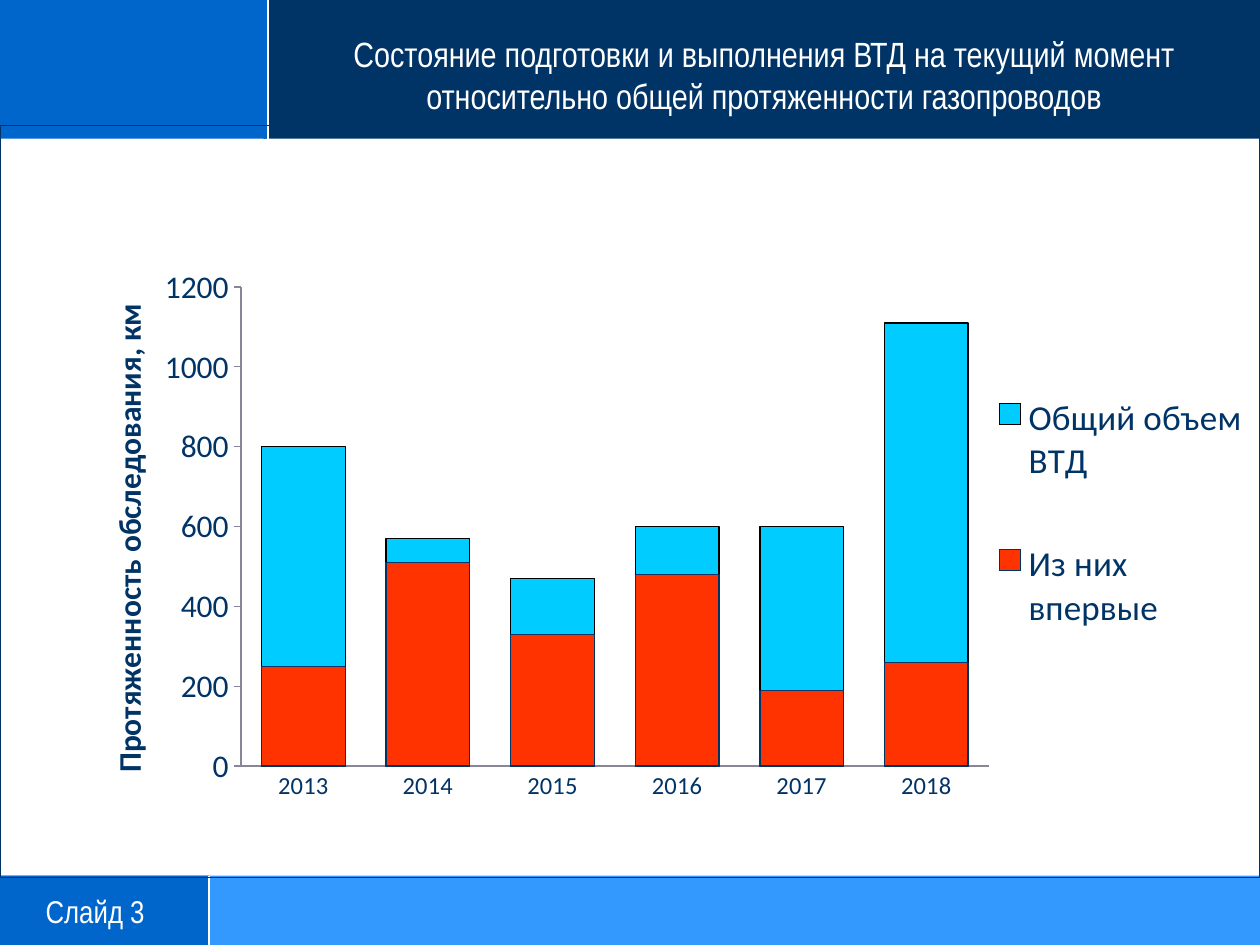
from lxml import etree
from pptx import Presentation
from pptx.chart.data import CategoryChartData
from pptx.dml.color import RGBColor
from pptx.enum.chart import XL_CHART_TYPE, XL_LEGEND_POSITION, XL_TICK_MARK
from pptx.enum.shapes import MSO_CONNECTOR, MSO_SHAPE
from pptx.enum.text import MSO_ANCHOR, MSO_AUTO_SIZE, PP_ALIGN
from pptx.oxml.ns import qn
from pptx.util import Pt

RECT = MSO_SHAPE.RECTANGLE
STRAIGHT = MSO_CONNECTOR.STRAIGHT
CLUSTERED = XL_CHART_TYPE.COLUMN_CLUSTERED
RIGHT = XL_LEGEND_POSITION.RIGHT
TICK_NONE, TICK_OUT = XL_TICK_MARK.NONE, XL_TICK_MARK.OUTSIDE
GROW = MSO_AUTO_SIZE.SHAPE_TO_FIT_TEXT
TOP = MSO_ANCHOR.TOP
CENTER = PP_ALIGN.CENTER

THEME = {
    "navy": RGBColor(0x00, 0x33, 0x66),
    "blue": RGBColor(0x00, 0x66, 0xCC),
    "sky": RGBColor(0x33, 0x99, 0xFF),
    "white": RGBColor(0xFF, 0xFF, 0xFF),
    "black": RGBColor(0x00, 0x00, 0x00),
    "cyan": RGBColor(0x00, 0xCC, 0xFF),
    "red": RGBColor(0xFF, 0x33, 0x00),
    "axis": RGBColor(0x87, 0x87, 0x97),
    "heading_font": "Arial Narrow",
    "chart_font": "Calibri",
    "title": Pt(20),
    "footer": Pt(18),
    "chart": Pt(18),
    "category": Pt(14),
    "legend": Pt(20),
}


def write_text(sp, text, size, wrap):
    tf = sp.text_frame
    for key, value in {"word_wrap": wrap, "auto_size": GROW, "vertical_anchor": TOP}.items():
        setattr(tf, key, value)
    p = tf.paragraphs[0]
    p.alignment = CENTER
    r = p.add_run()
    r.text = text
    for key, value in {"size": size, "name": THEME["heading_font"], "bold": False}.items():
        setattr(r.font, key, value)
    r.font.color.rgb = THEME["white"]


def place(parent, **values):
    for old in parent.findall(qn("c:layout")):
        parent.remove(old)
    layout = etree.Element(qn("c:layout"))
    manual = etree.SubElement(layout, qn("c:manualLayout"))
    for key, value in values.items():
        etree.SubElement(manual, qn("c:" + key)).set("val", str(value))
    overlay = parent.find(qn("c:overlay"))
    parent.insert(0 if overlay is None else parent.index(overlay), layout)


prs = Presentation()
prs.slide_width, prs.slide_height = Pt(720), Pt(540)
s = prs.slides.add_slide(prs.slide_layouts[5])

HEADER_H, FOOTER_Y, FOOTER_H = 79.2, 500.4, 39.6
LOGO_W, NUMBER_W = 153.36, 119.52

bands = [
    (150.48, 0, 569.52, HEADER_H, "navy"),
    (0, 0, LOGO_W, HEADER_H, "blue"),
    (0, FOOTER_Y, 720, FOOTER_H, "sky"),
    (0, FOOTER_Y, NUMBER_W, FOOTER_H, "blue"),
]
for x, y, w, h, color in bands:
    sp = s.shapes.add_shape(RECT, Pt(x), Pt(y), Pt(w), Pt(h))
    sp.shadow.inherit = False
    sp.fill.solid()
    sp.fill.fore_color.rgb = THEME[color]
    sp.line.fill.background()

for x, bottom, top, width in [(LOGO_W, HEADER_H, 0, 1.25), (NUMBER_W, 540, FOOTER_Y, 1)]:
    line = s.shapes.add_connector(STRAIGHT, Pt(x), Pt(bottom), Pt(x), Pt(top))
    line.line.color.rgb = THEME["white"]
    line.line.width = Pt(width)
    etree.SubElement(line.element.spPr, qn("a:effectLst"))

number = s.shapes.add_textbox(Pt(13.68), Pt(506.16), Pt(81.36), Pt(28.8))
write_text(number, "Слайд 3", THEME["footer"], False)

title = s.shapes.title
box = {"left": Pt(LOGO_W), "top": Pt(15.12), "width": Pt(566.64), "height": Pt(55.44)}
for key, value in box.items():
    setattr(title, key, value)
write_text(title, "Состояние подготовки и выполнения ВТД на текущий момент "
           "относительно общей протяженности газопроводов", THEME["title"], True)
title.element.getparent().append(title.element)

data = CategoryChartData()
data.categories = ["2013", "2014", "2015", "2016", "2017", "2018"]
data.add_series("Общий объем ВТД", [800, 570, 470, 600, 600, 1110])
data.add_series("Из них впервые", [250, 510, 330, 480, 190, 260])
frame = s.shapes.add_chart(CLUSTERED, Pt(0), Pt(71.28), Pt(720), Pt(430.56), data)
chart = frame.chart
chart.has_title = False
chart.font.size = THEME["chart"]
chart.font.name = THEME["chart_font"]
chart.font.color.rgb = THEME["navy"]

plot = chart.plots[0]
for key, value in {"gap_width": 49, "overlap": 100, "vary_by_categories": False}.items():
    setattr(plot, key, value)
for series, fill, outline in zip(plot.series, ("cyan", "red"), ("black", "navy")):
    series.format.fill.solid()
    series.format.fill.fore_color.rgb = THEME[fill]
    series.format.line.color.rgb = THEME[outline]
    series.format.line.width = Pt(0.75)

axis_formats = [
    (chart.category_axis, {"major_tick_mark": TICK_NONE}, "category"),
    (chart.value_axis, {"major_tick_mark": TICK_OUT, "minimum_scale": 0,
                        "maximum_scale": 1200, "major_unit": 200}, "chart"),
]
for axis, values, size in axis_formats:
    for key, value in values.items():
        setattr(axis, key, value)
    axis.minor_tick_mark = TICK_NONE
    axis.has_major_gridlines = False
    axis.tick_labels.font.size = THEME[size]
    axis.format.line.color.rgb = THEME["axis"]
    axis.format.line.width = Pt(0.75)

axis_title = chart.value_axis.axis_title
p = axis_title.text_frame.paragraphs[0]
r = p.add_run()
r.text = "Протяженность обследования, км"
for key, value in {"size": THEME["chart"], "name": THEME["chart_font"], "bold": True}.items():
    setattr(r.font, key, value)
r.font.color.rgb = THEME["navy"]

chart.has_legend = True
legend = chart.legend
legend.position = RIGHT
legend.include_in_layout = False
legend.font.size = THEME["legend"]
legend.font.name = THEME["chart_font"]
legend.font.color.rgb = THEME["navy"]

root = chart.element
place(root.find(".//" + qn("c:plotArea")), layoutTarget="inner", xMode="edge", yMode="edge",
      x=0.191, y=0.215, w=0.594, h=0.637)
place(chart.value_axis.axis_title.element if hasattr(axis_title, "element")
      else root.find(".//" + qn("c:valAx") + "/" + qn("c:title")),
      xMode="edge", yMode="edge", x=0.08, y=0.23)
place(root.find(".//" + qn("c:legend")), xMode="edge", yMode="edge",
      x=0.785, y=0.28, w=0.21, h=0.47)

border = etree.Element(qn("c:spPr"))
etree.SubElement(border, qn("a:noFill"))
ln = etree.SubElement(border, qn("a:ln"), w=str(Pt(0.75)))
fill = etree.SubElement(ln, qn("a:solidFill"))
etree.SubElement(fill, qn("a:srgbClr"), val=str(THEME["navy"]))
root.find(qn("c:chart")).addnext(border)

prs.save("out.pptx")
